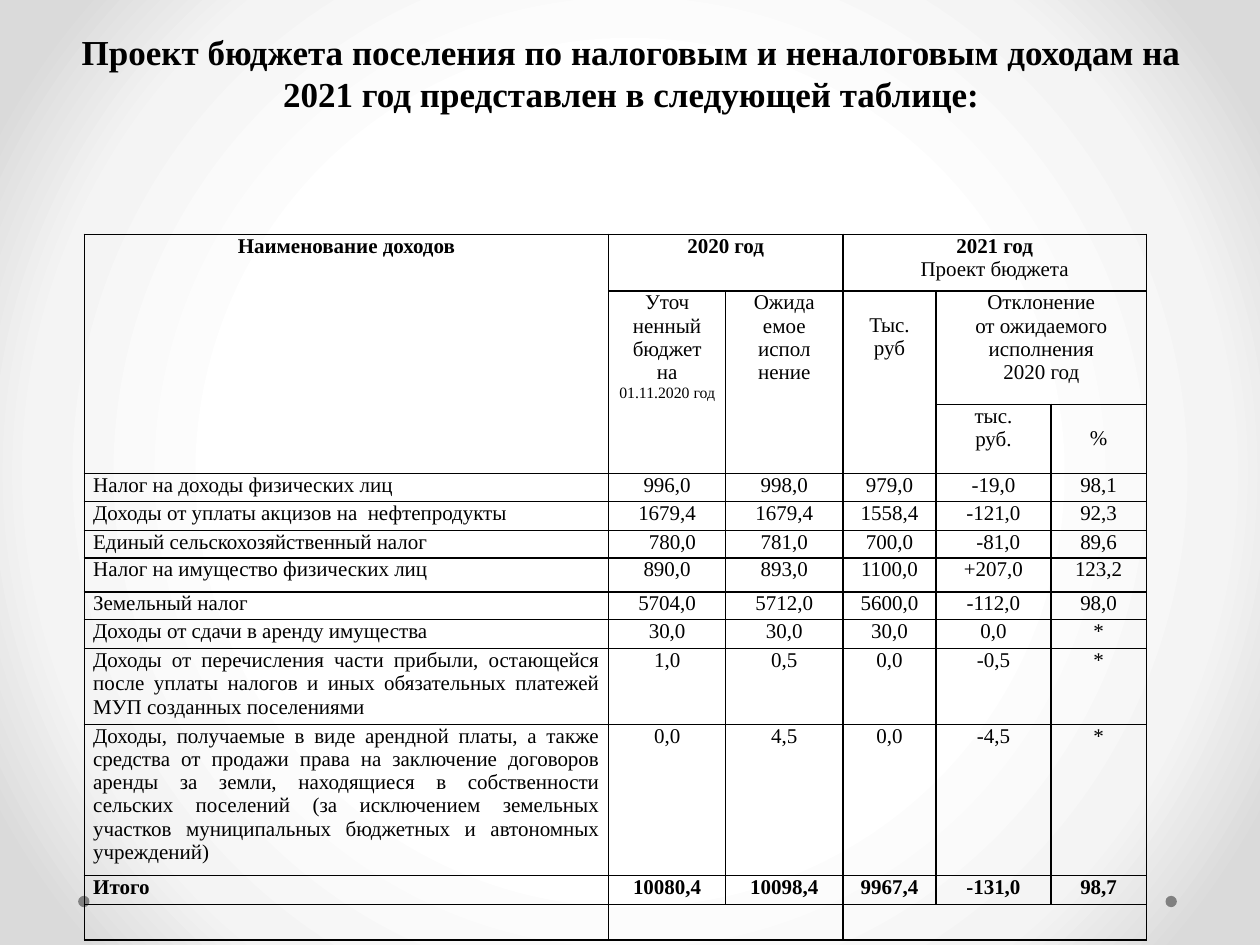
from pptx import Presentation
from pptx.dml.color import RGBColor
from pptx.enum.shapes import MSO_SHAPE as Shape
from pptx.enum.text import MSO_ANCHOR as Anchor, MSO_AUTO_SIZE as AutoSize, PP_ALIGN as Align
from pptx.oxml import parse_xml
from pptx.oxml.ns import nsdecls
from pptx.util import Inches, Pt

BLACK = RGBColor(0x00, 0x00, 0x00)
GRAY = RGBColor(0x80, 0x80, 0x80)
GRADIENT = [(50, RGBColor(0xFF, 0xFF, 0xFF)),
            (76, RGBColor(0xF4, 0xF4, 0xF4)),
            (92, RGBColor(0xDA, 0xDA, 0xDA))]
FONT = "Times New Roman"
LINE = 0.18  # height of one blank line above a header, inches

COLUMN_WIDTHS = [4.16, 0.93, 0.93, 0.74, 0.91, 0.76]
ROW_HEIGHTS = [0.45, 0.9, 0.55, 0.22, 0.23, 0.22, 0.27,
               0.22, 0.23, 0.6, 1.2, 0.23, 0.22]

# Merged areas: first row, first column, last row, last column
MERGES = [(0, 0, 2, 0), (0, 1, 0, 2), (0, 3, 0, 5), (1, 1, 2, 1), (1, 2, 2, 2),
          (1, 3, 2, 3), (1, 4, 1, 5), (12, 1, 12, 2), (12, 3, 12, 5)]

# Header cells: row, column, paragraphs, format
HEADERS = [
    (0, 0, ["Наименование доходов"], {"bold": True}),
    (0, 1, ["2020 год"], {"bold": True}),
    (0, 3, ["2021 год"], {"bold": True}),
    (1, 1, ["Уточ", "ненный бюджет", "на"], {}),
    (1, 2, ["Ожида", "емое испол", "нение"], {}),
    (1, 3, ["Тыс.", "руб"], {"top": LINE}),
    (1, 4, ["Отклонение", "от ожидаемого", "исполнения", "2020 год"], {}),
    (2, 4, ["тыс.", "руб."], {}),
    (2, 5, ["%"], {"top": LINE}),
]

INCOME_ROWS = [
    ("Налог на доходы физических лиц", "996,0", "998,0", "979,0", "-19,0", "98,1"),
    ("Доходы от уплаты акцизов на  нефтепродукты",
     "1679,4", "1679,4", "1558,4", "-121,0", "92,3"),
    ("Единый сельскохозяйственный налог", "780,0", "781,0", "700,0", "-81,0", "89,6"),
    ("Налог на имущество физических лиц",
     "890,0", "893,0", "1100,0", "+207,0", "123,2"),
    ("Земельный налог", "5704,0", "5712,0", "5600,0", "-112,0", "98,0"),
    ("Доходы от сдачи в аренду имущества", "30,0", "30,0", "30,0", "0,0", "*"),
    ("Доходы от перечисления части прибыли, остающейся после уплаты налогов и иных "
     "обязательных платежей МУП созданных поселениями",
     "1,0", "0,5", "0,0", "-0,5", "*"),
    ("Доходы, получаемые в виде арендной платы, а также средства от продажи права на "
     "заключение договоров аренды за земли, находящиеся в собственности сельских "
     "поселений (за исключением земельных участков муниципальных бюджетных и "
     "автономных учреждений)", "0,0", "4,5", "0,0", "-4,5", "*"),
    ("Итого", "10080,4", "10098,4", "9967,4", "-131,0", "98,7"),
]
FIRST_INCOME_ROW = 3
JUSTIFIED_FROM = 9
TOTAL_ROW = 11
INDENTED = {(5, 1), (5, 4)}  # left-aligned values with an indent


def write_paragraph(paragraph, text, size=12, bold=False, align=Align.CENTER, indent=0):
    paragraph.alignment = align
    paragraph.line_spacing = 1.0
    paragraph.space_before = paragraph.space_after = Pt(0)
    if indent:
        paragraph._p.get_or_add_pPr().set("marL", str(Inches(indent)))
    run = paragraph.add_run()
    run.text = text
    run.font.name = FONT
    run.font.size = Pt(size)
    run.font.bold = bold
    run.font.color.rgb = BLACK


def write_cell(cell, lines, top=0, **text_format):
    cell.margin_top = Inches(top)
    frame = cell.text_frame
    for number, line in enumerate(lines):
        paragraph = frame.add_paragraph() if number else frame.paragraphs[0]
        write_paragraph(paragraph, line, **text_format)


def prepare_cell(cell):
    """Set margins, black 1 pt borders and no fill."""
    cell.margin_left = cell.margin_right = Inches(0.07)
    cell.margin_top = cell.margin_bottom = 0
    properties = cell._tc.get_or_add_tcPr()
    for side in ("lnL", "lnR", "lnT", "lnB"):
        properties.append(parse_xml(
            f'<a:{side} {nsdecls("a")} w="{Pt(1)}"><a:solidFill>'
            f'<a:srgbClr val="{BLACK}"/></a:solidFill></a:{side}>'))
    cell.fill.background()


def set_background(slide):
    stops = "".join(f'<a:gs pos="{position * 1000}"><a:srgbClr val="{color}"/></a:gs>'
                    for position, color in GRADIENT)
    slide.element.cSld.insert(0, parse_xml(
        f'<p:bg {nsdecls("p", "a")}><p:bgPr><a:gradFill rotWithShape="1">'
        f'<a:gsLst>{stops}</a:gsLst><a:path path="circle">'
        '<a:fillToRect l="50000" t="50000" r="50000" b="50000"/></a:path>'
        '</a:gradFill><a:effectLst/></p:bgPr></p:bg>'))


def add_dot(slide, left):
    dot = slide.shapes.add_shape(Shape.OVAL, Inches(left), Inches(7.11),
                                 Inches(0.09), Inches(0.09))
    dot.shadow.inherit = False
    dot.fill.solid()
    dot.fill.fore_color.rgb = GRAY
    dot.line.fill.background()


def set_title(slide, text):
    title = slide.shapes.title
    title.left, title.top = Inches(0.51), Inches(0.36)
    title.width, title.height = Inches(9), Inches(0.6)
    frame = title.text_frame
    frame.word_wrap = True
    frame.auto_size = AutoSize.NONE
    frame.vertical_anchor = Anchor.BOTTOM
    write_paragraph(frame.paragraphs[0], text, size=20, bold=True)


def add_income_table(slide):
    table = slide.shapes.add_table(
        len(ROW_HEIGHTS), len(COLUMN_WIDTHS), Inches(0.67), Inches(1.86),
        Inches(sum(COLUMN_WIDTHS)), Inches(sum(ROW_HEIGHTS))).table
    table.first_row = table.horz_banding = False
    for column, width in zip(table.columns, COLUMN_WIDTHS):
        column.width = Inches(width)
    for row, height in zip(table.rows, ROW_HEIGHTS):
        row.height = Inches(height)
    for cell in table.iter_cells():
        prepare_cell(cell)
    for top, left, bottom, right in MERGES:
        table.cell(top, left).merge(table.cell(bottom, right))

    # Header
    for row, column, lines, text_format in HEADERS:
        write_cell(table.cell(row, column), lines, **text_format)
    write_paragraph(table.cell(0, 3).text_frame.add_paragraph(), "Проект бюджета")
    write_paragraph(table.cell(1, 1).text_frame.add_paragraph(),
                    "01.11.2020 год", size=9)

    # Income lines and total
    for row, values in enumerate(INCOME_ROWS, FIRST_INCOME_ROW):
        for column, value in enumerate(values):
            align, indent = Align.CENTER, 0
            if column == 0:
                align = Align.JUSTIFY if row >= JUSTIFIED_FROM else Align.LEFT
            elif (row, column) in INDENTED:
                align, indent = Align.LEFT, 0.25
            write_cell(table.cell(row, column), [value], align=align,
                       indent=indent, bold=row == TOTAL_ROW)

    # Empty cells keep the small text size, so that rows do not grow
    for cell in table.iter_cells():
        if not cell.text_frame.text:
            write_cell(cell, [""])


def main():
    presentation = Presentation()
    presentation.slide_width, presentation.slide_height = Inches(10), Inches(7.5)
    slide = presentation.slides.add_slide(presentation.slide_layouts[5])
    set_background(slide)
    for left in (9.25, 0.62):
        add_dot(slide, left)
    set_title(slide, "Проект бюджета поселения по налоговым и неналоговым доходам "
                     "на 2021 год представлен в следующей таблице:")
    add_income_table(slide)
    presentation.save("out.pptx")


if __name__ == "__main__":
    main()
